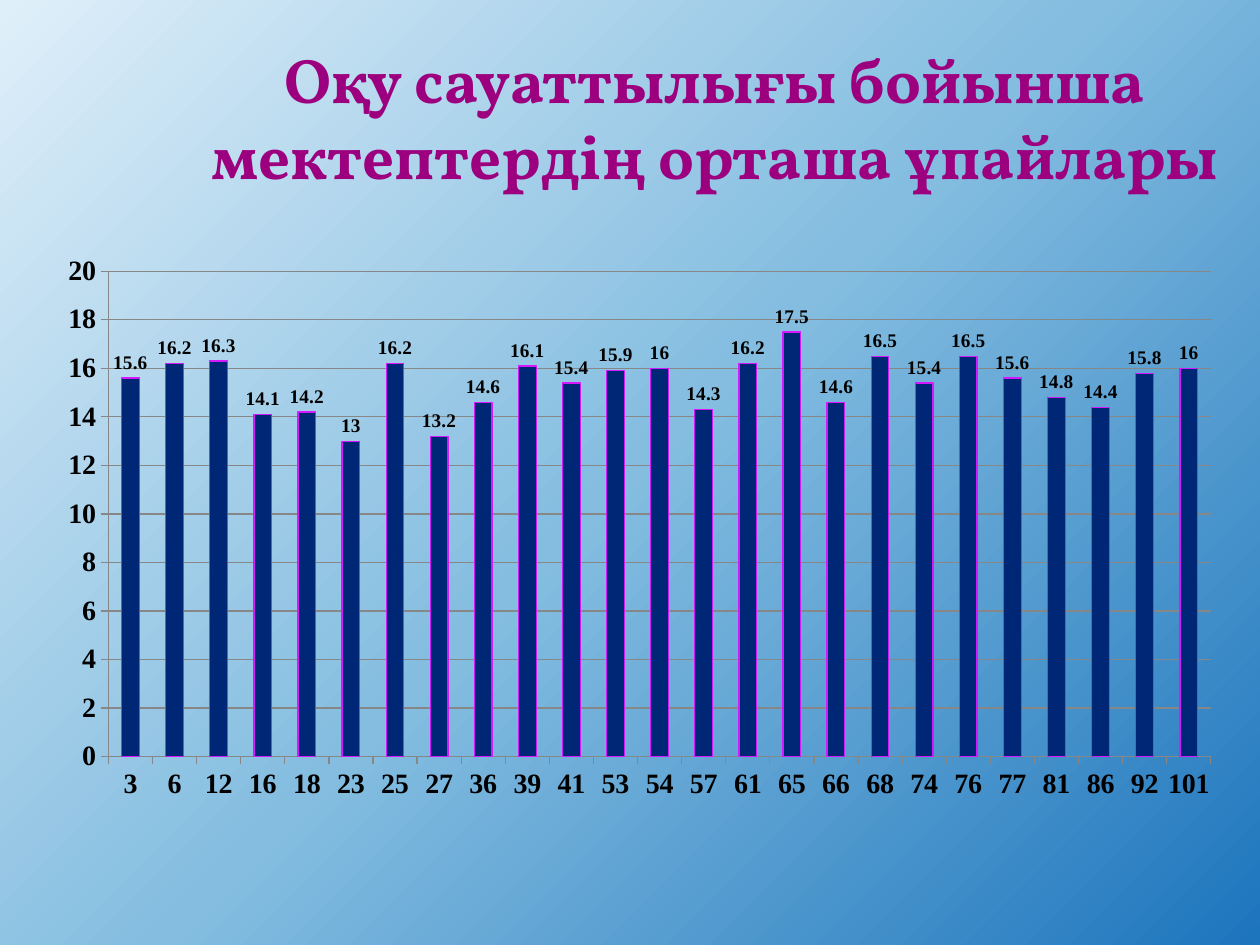
from copy import deepcopy

from lxml import etree
from pptx import Presentation
from pptx.chart.data import CategoryChartData
from pptx.dml.color import RGBColor
from pptx.enum.chart import XL_CHART_TYPE, XL_LABEL_POSITION, XL_TICK_MARK
from pptx.enum.text import MSO_ANCHOR, PP_ALIGN
from pptx.oxml.ns import qn
from pptx.util import Cm, Pt

COLUMNS = XL_CHART_TYPE.COLUMN_CLUSTERED
OUTSIDE_END = XL_LABEL_POSITION.OUTSIDE_END
TICK_OUT = XL_TICK_MARK.OUTSIDE
MIDDLE = MSO_ANCHOR.MIDDLE
CENTER = PP_ALIGN.CENTER

TITLE = "Оқу сауаттылығы бойынша мектептердің орташа ұпайлары"
SCORES = {
    3: 15.6, 6: 16.2, 12: 16.3, 16: 14.1, 18: 14.2,
    23: 13, 25: 16.2, 27: 13.2, 36: 14.6, 39: 16.1,
    41: 15.4, 53: 15.9, 54: 16, 57: 14.3, 61: 16.2,
    65: 17.5, 66: 14.6, 68: 16.5, 74: 15.4, 76: 16.5,
    77: 15.6, 81: 14.8, 86: 14.4, 92: 15.8, 101: 16,
}
BACKGROUND = [(0, "1D75BD"), (0.5, "84BDE0"), (1, "DFEFF9")]
PLOT_AREA = {"x": 0.054, "y": 0.047, "w": 0.926, "h": 0.854}


def rgb(value):
    return RGBColor.from_string(value)


def set_font(font, name, size, color):
    font.name = name
    font.size = Pt(size)
    font.bold = True
    font.color.rgb = rgb(color)


def set_background(s):
    fill = s.background.fill
    fill.gradient()
    fill.gradient_angle = 135
    stops = s.element.find(".//" + qn("a:gsLst"))
    stops.append(deepcopy(stops[-1]))
    for stop, (position, color) in zip(fill.gradient_stops, BACKGROUND):
        stop.position = position
        stop.color.rgb = rgb(color)


def add_title(s):
    sp = s.shapes.add_textbox(Cm(3.91), Cm(0.76), Cm(21), Cm(3.18))
    tf = sp.text_frame
    tf.word_wrap = True
    tf.vertical_anchor = MIDDLE
    p = tf.paragraphs[0]
    p.text = TITLE
    p.alignment = CENTER
    set_font(p.font, "Vollkorn", 36, "9C007F")


def set_plot_layout(chart):
    plot_area = chart.element.find(".//" + qn("c:plotArea"))
    layout = plot_area.find(qn("c:layout"))
    if layout is None:
        layout = etree.Element(qn("c:layout"))
        plot_area.insert(0, layout)
    manual = etree.SubElement(layout, qn("c:manualLayout"))
    settings = {"layoutTarget": "inner", "xMode": "edge", "yMode": "edge", **PLOT_AREA}
    for tag, value in settings.items():
        etree.SubElement(manual, qn(f"c:{tag}")).set("val", str(value))


def add_score_chart(s):
    data = CategoryChartData()
    data.categories = [str(school) for school in SCORES]
    data.add_series("Series 1", SCORES.values())
    chart = s.shapes.add_chart(COLUMNS, Cm(0.89), Cm(4.93), Cm(24), Cm(11.46), data).chart
    chart.has_legend = False
    chart.has_title = False
    chart.font.name = "Calibri"
    chart.font.size = Pt(18)
    set_plot_layout(chart)

    for axis in (chart.category_axis, chart.value_axis):
        axis.major_tick_mark = TICK_OUT
        axis.format.line.color.rgb = rgb("878787")
        axis.format.line.width = Pt(0.75)
        set_font(axis.tick_labels.font, "Times New Roman", 16, "000000")
    value_axis = chart.value_axis
    value_axis.minimum_scale = 0
    value_axis.maximum_scale = 20
    value_axis.major_unit = 2
    value_axis.has_major_gridlines = True
    grid = value_axis.major_gridlines.format.line
    grid.color.rgb = rgb("878787")
    grid.width = Pt(0.75)

    plot = chart.plots[0]
    plot.gap_width = 150
    plot.vary_by_categories = False
    series = plot.series[0]
    series.format.fill.solid()
    series.format.fill.fore_color.rgb = rgb("002776")
    series.format.line.color.rgb = rgb("D519FF")
    series.format.line.width = Pt(0.75)
    labels = series.data_labels
    labels.show_value = True
    labels.position = OUTSIDE_END
    set_font(labels.font, "Times New Roman", 11, "000000")


def main():
    prs = Presentation()
    prs.slide_width = Cm(25.4)
    prs.slide_height = Cm(19.05)
    s = prs.slides.add_slide(prs.slide_layouts[6])
    set_background(s)
    add_title(s)
    add_score_chart(s)
    prs.save("out.pptx")


if __name__ == "__main__":
    main()
